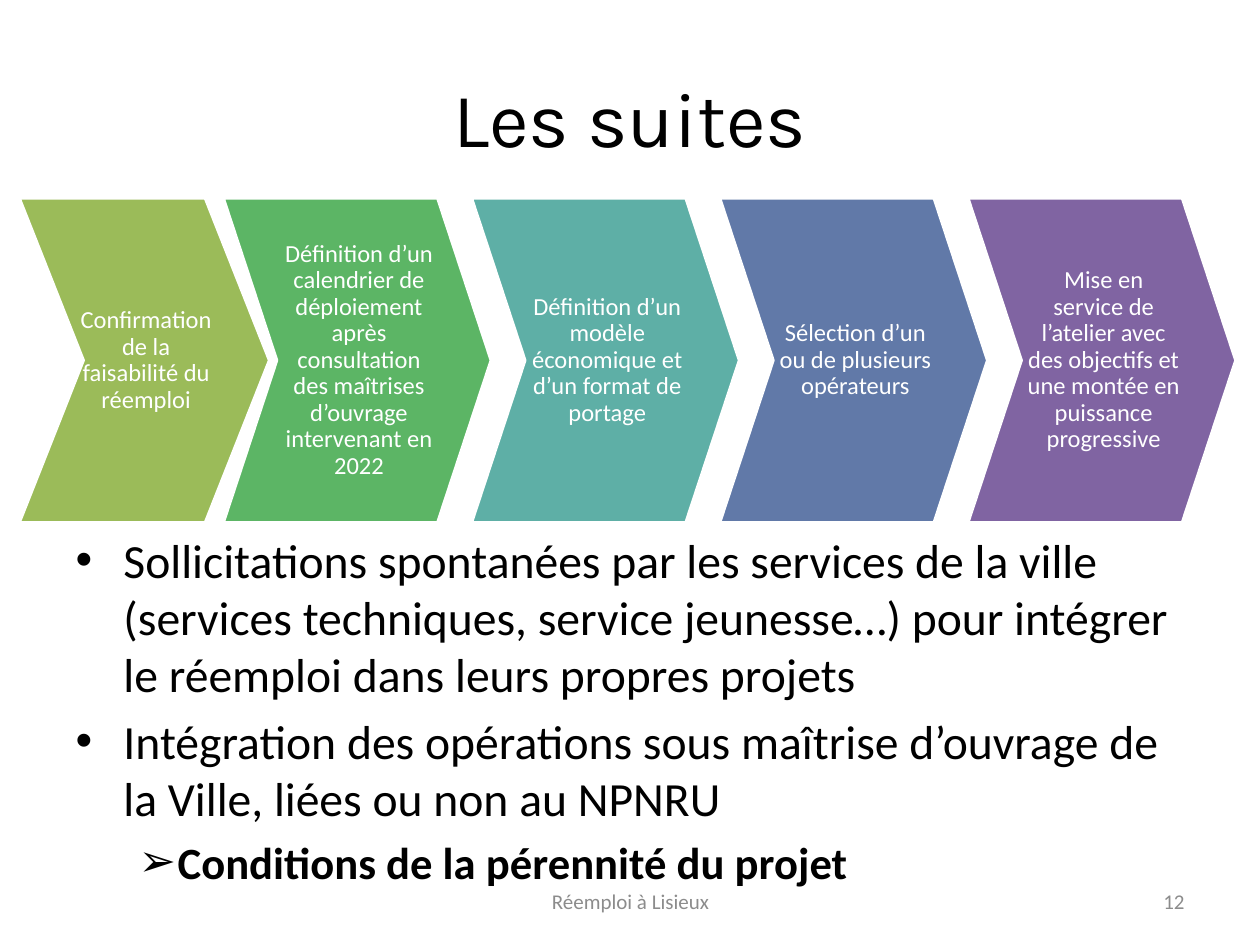
from lxml import etree
from pptx import Presentation
from pptx.dml.color import RGBColor
from pptx.enum import text
from pptx.oxml import ns
from pptx.util import Inches, Pt

STEPS = [
    ("9BBB59", "Confirmation de la faisabilité du réemploi"),
    ("5CB565", "Définition d’un calendrier de déploiement après consultation "
               "des maîtrises d’ouvrage intervenant en 2022"),
    ("5EAFA6", "Définition d’un modèle économique et d’un format de portage"),
    ("6179A8", "Sélection d’un ou de plusieurs opérateurs"),
    ("8064A2", "Mise en service de l’atelier avec des objectifs et une montée "
               "en puissance progressive"),
]
POINTS = [
    ("Sollicitations spontanées par les services de la ville (services "
     "techniques, service jeunesse…) pour intégrer le réemploi dans leurs "
     "propres projets", 0),
    ("Intégration des opérations sous maîtrise d’ouvrage de la Ville, liées "
     "ou non au NPNRU", 0),
    ("Conditions de la pérennité du projet", 1),
]
LEVELS = [
    {"bullet": "•", "margin": 0.38, "indent": -0.38, "size": 27.2, "bold": False},
    {"bullet": "➢", "margin": 0.81, "indent": -0.31, "size": 25.5, "bold": True},
]
LEFT, CENTER, RIGHT = (text.PP_ALIGN.LEFT, text.PP_ALIGN.CENTER,
                       text.PP_ALIGN.RIGHT)
MIDDLE = text.MSO_ANCHOR.MIDDLE


def color(value):
    return RGBColor.from_string(value)


def place(shape, box):
    for side, length in zip(("left", "top", "width", "height"), box):
        setattr(shape, side, Inches(length))


def set_frame(frame, anchor, **margins):
    settings = {"word_wrap": True, "auto_size": text.MSO_AUTO_SIZE.NONE,
                "vertical_anchor": anchor}
    settings.update({f"margin_{side}": Inches(length)
                     for side, length in margins.items()})
    for name, value in settings.items():
        setattr(frame, name, value)


def write(para, words, size, shade, align, face="Calibri", bold=False):
    para.alignment = align
    span = para.add_run()
    span.text = words
    for name, value in {"name": face, "size": Pt(size), "bold": bold}.items():
        setattr(span.font, name, value)
    span.font.color.rgb = color(shade)


def add_title(page, box, words):
    title = page.shapes.title
    place(title, box)
    set_frame(title.text_frame, MIDDLE)
    write(title.text_frame.paragraphs[0], words, 44, "000000", CENTER, "Karla")


def add_chevron(shapes, box, notch, fill, words):
    left, top, width, height = box
    right, middle, bottom = left + width, top + height / 2, top + height
    outline = [(left, top), (right - notch, top), (right, middle),
               (right - notch, bottom), (left, bottom), (left + notch, middle)]
    points = [(Inches(x), Inches(y)) for x, y in outline]
    builder = shapes.build_freeform(*points[0])
    builder.add_line_segments(points[1:], close=True)
    chevron = builder.convert_to_shape()
    chevron.shadow.inherit = False
    chevron.fill.solid()
    chevron.fill.fore_color.rgb = color(fill)
    chevron.line.color.rgb = color("FFFFFF")
    chevron.line.width = Pt(2)
    set_frame(chevron.text_frame, MIDDLE,
              left=0.47, top=0.01, right=0.44, bottom=0.01)
    para = chevron.text_frame.paragraphs[0]
    para.line_spacing = 0.9
    write(para, words, 14, "FFFFFF", CENTER)


def add_process(page, box, steps):
    """Draw a row of chevrons; the first is narrower with a deeper notch."""
    left, top, width, height = box
    first_width, step_width, overlap = 1.99, 2.13, 0.21
    pitch = (width - first_width + overlap) / (len(steps) - 1)
    group = page.shapes.add_group_shape()
    for index, (fill, words) in enumerate(steps):
        if index == 0:
            x, span_width, notch = left, first_width, 0.51
        else:
            x = left + width - step_width - (len(steps) - 1 - index) * pitch
            span_width, notch = step_width, 0.425
        add_chevron(group.shapes, (x, top, span_width, height), notch,
                    fill, words)


def set_bullet(para, style):
    props = para._p.get_or_add_pPr()
    props.set("marL", str(Inches(style["margin"])))
    props.set("indent", str(Inches(style["indent"])))
    etree.SubElement(props, ns.qn("a:buFont")).set("typeface", "Arial")
    etree.SubElement(props, ns.qn("a:buChar")).set("char", style["bullet"])


def add_points(page, box, points):
    body = page.placeholders[1]
    place(body, box)
    frame = body.text_frame
    set_frame(frame, text.MSO_ANCHOR.TOP)
    for index, (words, level) in enumerate(points):
        para = frame.add_paragraph() if index else frame.paragraphs[0]
        style = LEVELS[level]
        para.level = level
        para.space_before = Pt(0.2 * style["size"] if index else 0)
        set_bullet(para, style)
        write(para, words, style["size"], "000000", LEFT, bold=style["bold"])


def add_footer(page, box, words, align):
    footer = page.shapes.add_textbox(*map(Inches, box))
    set_frame(footer.text_frame, MIDDLE)
    write(footer.text_frame.paragraphs[0], words, 12, "8C8C8C", align)


def main():
    deck = Presentation()
    deck.slide_width, deck.slide_height = Inches(10), Inches(7.5)
    page = deck.slides.add_slide(deck.slide_layouts[1])
    add_title(page, (0.5, 0.3, 9, 1.25), "Les suites")
    add_footer(page, (3.42, 6.95, 3.17, 0.4), "Réemploi à Lisieux", CENTER)
    add_footer(page, (7.17, 6.95, 2.33, 0.4), "12", RIGHT)
    add_process(page, (0.15, 1.57, 9.66, 2.58), STEPS)
    add_points(page, (0.5, 4.16, 9, 2.9), POINTS)
    deck.save("out.pptx")


if __name__ == "__main__":
    main()
